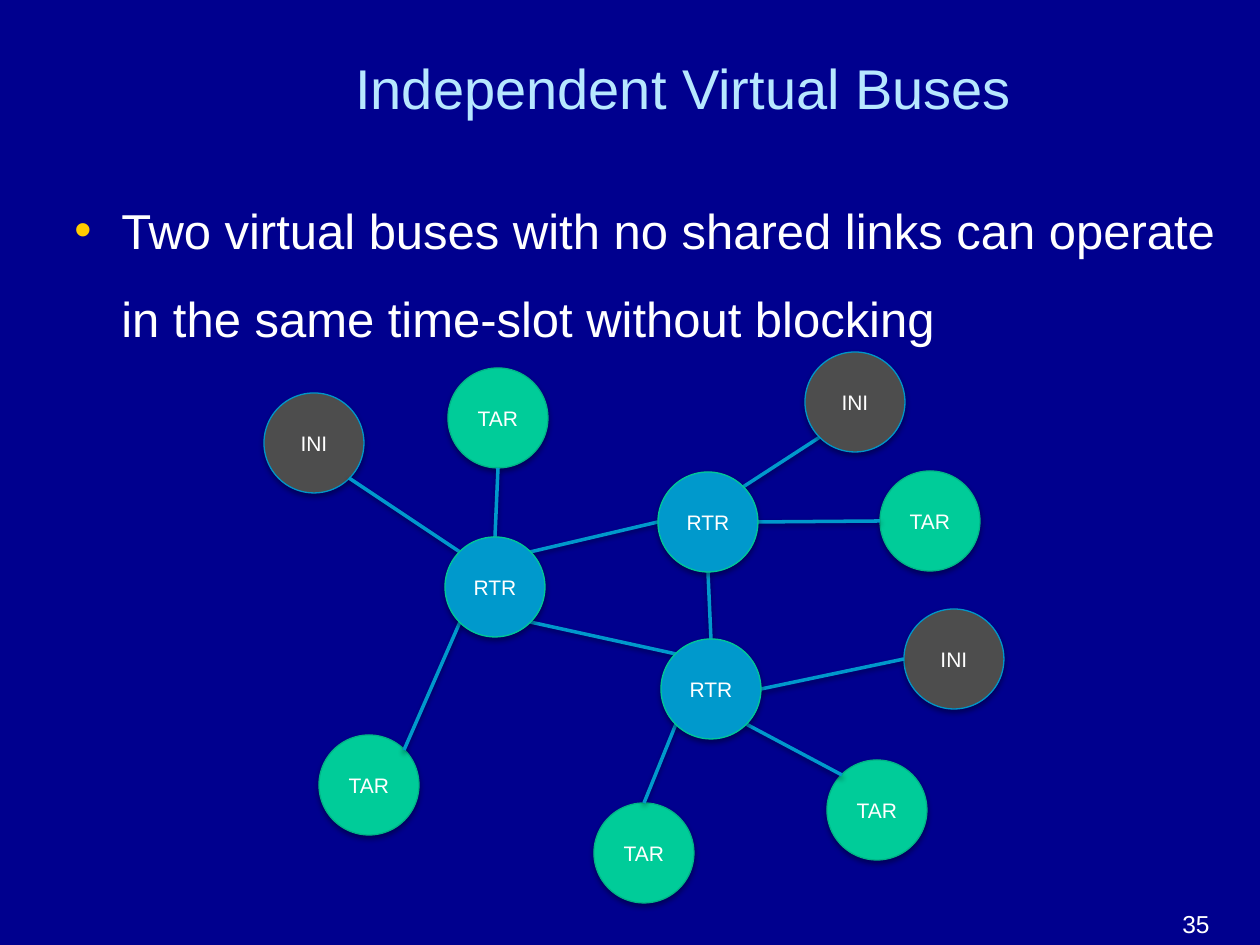
from lxml import etree
from pptx import Presentation
from pptx import util as u
from pptx.dml.color import RGBColor
from pptx.enum import shapes, text
from pptx.oxml import ns

PX = 914400 / 126
NAVY = RGBColor(0x00, 0x00, 0x8E)
WHITE = RGBColor(0xFF, 0xFF, 0xFF)
PALE_BLUE = RGBColor(0xB7, 0xE7, 0xFF)
GOLD = RGBColor(0xFF, 0xCC, 0x00)
LINK_BLUE = RGBColor(0x00, 0x99, 0xCC)

ROLES = {
    "INI": (RGBColor(0x4D, 0x4D, 0x4D), RGBColor(0x00, 0x96, 0xC8)),
    "TAR": (RGBColor(0x00, 0xCC, 0x99), RGBColor(0x00, 0xB5, 0x87)),
    "RTR": (LINK_BLUE, RGBColor(0x00, 0xC8, 0x96)),
}
DIAMETER = 100
RIM = {"t": (0, -50), "b": (0, 50), "l": (-50, 0), "r": (50, 0),
       "tl": (-35, -35), "tr": (35, -35), "bl": (-35, 35), "br": (35, 35)}

NODES = {
    "west initiator": ("INI", 314, 443),
    "east target": ("TAR", 930, 521),
    "north target": ("TAR", 498, 418),
    "west target": ("TAR", 369, 785),
    "east initiator": ("INI", 954, 659),
    "south target": ("TAR", 644, 853),
    "corner target": ("TAR", 877, 810),
    "west router": ("RTR", 495, 587),
    "north router": ("RTR", 708, 522),
    "north initiator": ("INI", 855, 402),
    "south router": ("RTR", 711, 689),
}
FRONT = ("west router", "north router", "north initiator", "south router")
LINKS = [
    ("north target", "b", "west router", "t"),
    ("west initiator", "br", "west router", "tl"),
    ("east target", "l", "north router", "r"),
    ("north router", "l", "west router", "tr"),
    ("east initiator", "l", "south router", "r"),
    ("west target", "tr", "west router", "bl"),
    ("south router", "bl", "south target", "t"),
    ("corner target", "tl", "south router", "br"),
    ("south router", "tl", "west router", "br"),
    ("north router", "b", "south router", "t"),
    ("north initiator", "bl", "north router", "tr"),
]


def emu(*lengths):
    return [u.Emu(round(length * PX)) for length in lengths]


def add(parent, tag, **attributes):
    return etree.SubElement(parent, ns.qn(tag), attributes)


def rim_point(node, side):
    _, x, y = NODES[node]
    dx, dy = RIM[side]
    return x + dx, y + dy


class BusSlide:
    """Draws text, network nodes and links on one slide in a shared style."""

    def __init__(self, slide, font="Arial"):
        self.slide, self.font = slide, font
        slide.background.fill.solid()
        slide.background.fill.fore_color.rgb = NAVY

    def fill_frame(self, frame, wording, size, color, **paragraph_format):
        paragraph = frame.paragraphs[0]
        for name, value in paragraph_format.items():
            setattr(paragraph, name, value)
        run = paragraph.add_run()
        run.text = wording
        for name, value in {"name": self.font, "size": u.Pt(size)}.items():
            setattr(run.font, name, value)
        run.font.color.rgb = color
        return paragraph

    def text(self, box, wording, size, color, anchor, **paragraph_format):
        frame = self.slide.shapes.add_textbox(*emu(*box)).text_frame
        frame.word_wrap = True
        frame.vertical_anchor = anchor
        return self.fill_frame(frame, wording, size, color, **paragraph_format)

    def bullet(self, box, wording, size, indent):
        paragraph = self.text(box, wording, size, WHITE, text.MSO_ANCHOR.TOP,
                              line_spacing=1.5)
        properties = paragraph._p.get_or_add_pPr()
        hang = emu(indent)[0]
        properties.set("marL", str(hang))
        properties.set("indent", str(-hang))
        add(add(properties, "a:buClr"), "a:srgbClr", val=str(GOLD))
        add(properties, "a:buFont", typeface=self.font)
        add(properties, "a:buChar", char="•")

    def shade(self, effects, alpha, distance):
        shadow = add(effects, "a:outerShdw", blurRad="40000", dist=str(distance),
                     dir="5400000", rotWithShape="0")
        black = add(shadow, "a:srgbClr", val="000000")
        add(black, "a:alpha", val=str(alpha * 1000))

    def node(self, name):
        role, x, y = NODES[name]
        fill, outline = ROLES[role]
        radius = DIAMETER // 2
        circle = self.slide.shapes.add_shape(
            shapes.MSO_SHAPE.OVAL,
            *emu(x - radius, y - radius, DIAMETER, DIAMETER))
        circle.fill.solid()
        circle.fill.fore_color.rgb = fill
        circle.line.color.rgb = outline
        circle.line.width = u.Pt(0.75)
        circle.shadow.inherit = False
        self.shade(circle._element.spPr.find(ns.qn("a:effectLst")), 35, 23000)
        frame = circle.text_frame
        frame.vertical_anchor = text.MSO_ANCHOR.MIDDLE
        self.fill_frame(frame, role, 12, WHITE, alignment=text.PP_ALIGN.CENTER)

    def link(self, start, start_side, end, end_side):
        wire = self.slide.shapes.add_connector(
            shapes.MSO_CONNECTOR.STRAIGHT,
            *emu(*rim_point(start, start_side), *rim_point(end, end_side)))
        wire.line.color.rgb = LINK_BLUE
        wire.line.width = u.Pt(2)
        self.shade(add(wire._element.spPr, "a:effectLst"), 38, 20000)


def main():
    deck = Presentation()
    deck.slide_width, deck.slide_height = emu(1260, 945)
    page = BusSlide(deck.slides.add_slide(deck.slide_layouts[6]))
    page.text((343, 37, 917, 101), "Independent Virtual Buses", 32, PALE_BLUE,
              text.MSO_ANCHOR.MIDDLE)
    page.bullet((62, 165, 1198, 721),
                "Two virtual buses with no shared links can operate "
                "in the same time-slot without blocking", 28, 47)
    page.text((1170, 886, 90, 59), "35", 14, WHITE, text.MSO_ANCHOR.BOTTOM)
    for name in NODES:
        if name not in FRONT:
            page.node(name)
    for ends in LINKS:
        page.link(*ends)
    for name in FRONT:
        page.node(name)
    deck.save("out.pptx")


if __name__ == "__main__":
    main()
